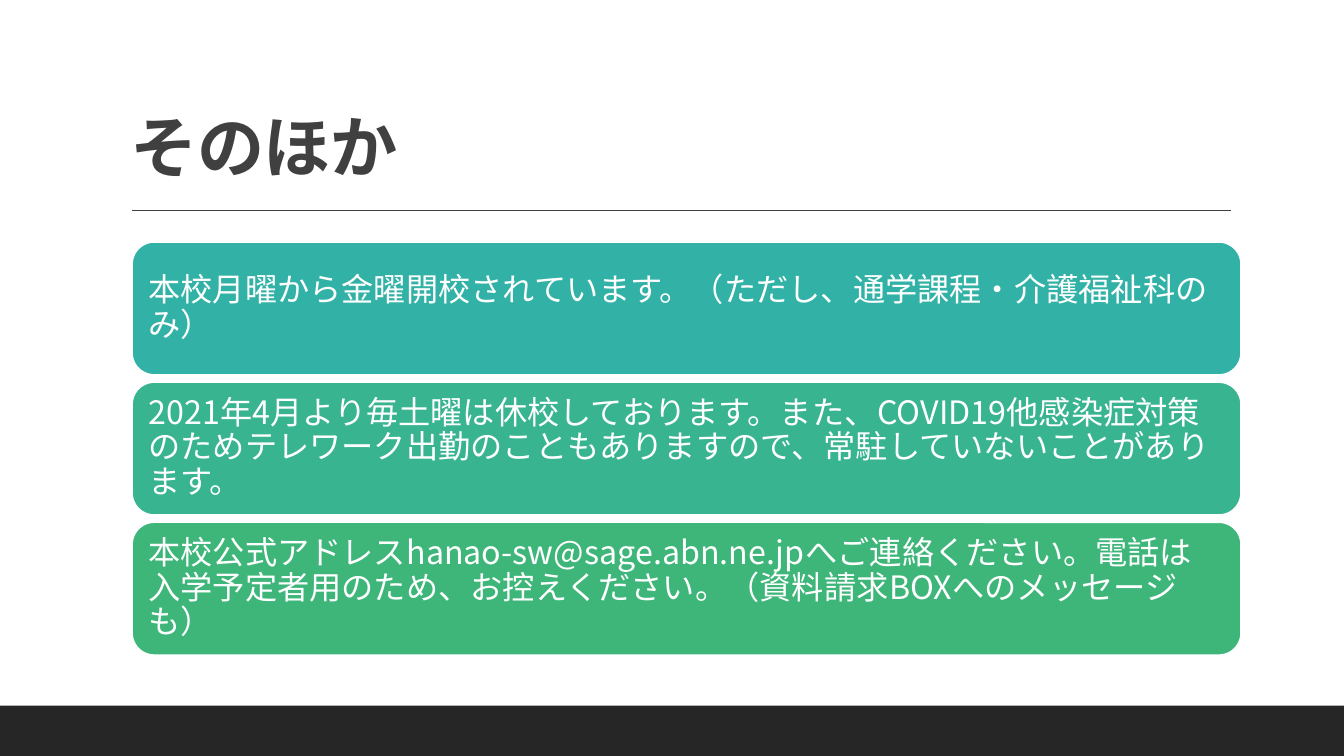
from lxml.etree import SubElement
from pptx import Presentation
from pptx.dml.color import RGBColor
from pptx.enum.shapes import MSO_CONNECTOR, MSO_SHAPE
from pptx.enum.text import MSO_ANCHOR, PP_ALIGN
from pptx.oxml.ns import qn
from pptx.util import Pt

PX = 9144
FONT = "Noto Sans CJK JP"
WHITE = RGBColor(0xFF, 0xFF, 0xFF)
TITLE_GRAY = RGBColor(0x40, 0x40, 0x40)
FOOTER_BLACK = RGBColor(0x26, 0x26, 0x26)
TEAL = RGBColor(0x32, 0xB2, 0xA7)
SEA_GREEN = RGBColor(0x38, 0xB4, 0x90)
GREEN = RGBColor(0x3E, 0xB6, 0x7A)

SLIDE_WIDTH, SLIDE_HEIGHT = 1333, 750
NOTICE_LEFT, NOTICE_TOP = 131, 240
NOTICE_WIDTH, NOTICE_HEIGHT, NOTICE_STEP = 1100, 132, 139

NOTICES = [
    (TEAL, "本校月曜から金曜開校されています。（ただし、通学課程・介護福祉科のみ）"),
    (SEA_GREEN, "2021年4月より毎土曜は休校しております。また、COVID19他感染症対策のため"
                "テレワーク出勤のこともありますので、常駐していないことがあります。"),
    (GREEN, "本校公式アドレスhanao-sw@sage.abn.ne.jpへご連絡ください。電話は"
            "入学予定者用のため、お控えください。（資料請求BOXへのメッセージも）"),
]


def px(*lengths):
    return [length * PX for length in lengths]


def apply_format(target, values):
    for attribute, value in values.items():
        setattr(target, attribute, value)


def write_text(holder, words, color, font_format, frame_format, spacing=0):
    frame = holder.text_frame
    apply_format(frame, {"word_wrap": True, **frame_format})
    paragraph = frame.paragraphs[0]
    apply_format(paragraph, {"alignment": PP_ALIGN.LEFT, "line_spacing": 0.9})
    run = paragraph.add_run()
    run.text = words
    apply_format(run.font, {"name": FONT, **font_format})
    run.font.color.rgb = color
    properties = run._r.get_or_add_rPr()
    properties.set("spc", str(spacing))
    SubElement(properties, qn("a:ea"), typeface=FONT)


def add_panel(slide, preset, box, fill):
    panel = slide.shapes.add_shape(preset, *px(*box))
    panel.shadow.inherit = False
    panel.fill.solid()
    panel.fill.fore_color.rgb = fill
    panel.line.fill.background()
    return panel


def add_title(slide, words):
    title = slide.shapes.add_textbox(*px(120, 31, 1100, 159))
    write_text(title, words, TITLE_GRAY, {"size": Pt(48), "bold": True},
               {"vertical_anchor": MSO_ANCHOR.BOTTOM}, -50)


def add_rule(slide):
    rule = slide.shapes.add_connector(MSO_CONNECTOR.STRAIGHT, *px(131, 209, 1221, 209))
    rule.line.color.rgb = TITLE_GRAY
    rule.line.width = Pt(1)
    SubElement(rule._element.spPr, qn("a:effectLst"))


def add_notice(slide, index, fill, words):
    box = (NOTICE_LEFT, NOTICE_TOP + index * NOTICE_STEP, NOTICE_WIDTH, NOTICE_HEIGHT)
    notice = add_panel(slide, MSO_SHAPE.ROUNDED_RECTANGLE, box, fill)
    notice.line.color.rgb = WHITE
    notice.line.width = Pt(1.25)
    inset = 10 * PX
    write_text(notice, words, WHITE, {"size": Pt(23)}, {
        "vertical_anchor": MSO_ANCHOR.MIDDLE,
        "margin_left": inset, "margin_right": inset,
        "margin_top": inset, "margin_bottom": inset,
    })


def main():
    presentation = Presentation()
    slide_width, slide_height = px(SLIDE_WIDTH, SLIDE_HEIGHT)
    apply_format(presentation, {"slide_width": slide_width, "slide_height": slide_height})
    slide = presentation.slides.add_slide(presentation.slide_layouts[6])
    slide.background.fill.solid()
    slide.background.fill.fore_color.rgb = WHITE

    add_title(slide, "そのほか")
    add_rule(slide)
    add_panel(slide, MSO_SHAPE.RECTANGLE, (0, 700, SLIDE_WIDTH, 50), FOOTER_BLACK)
    for index, (fill, words) in enumerate(NOTICES):
        add_notice(slide, index, fill, words)

    presentation.save("out.pptx")


if __name__ == "__main__":
    main()
